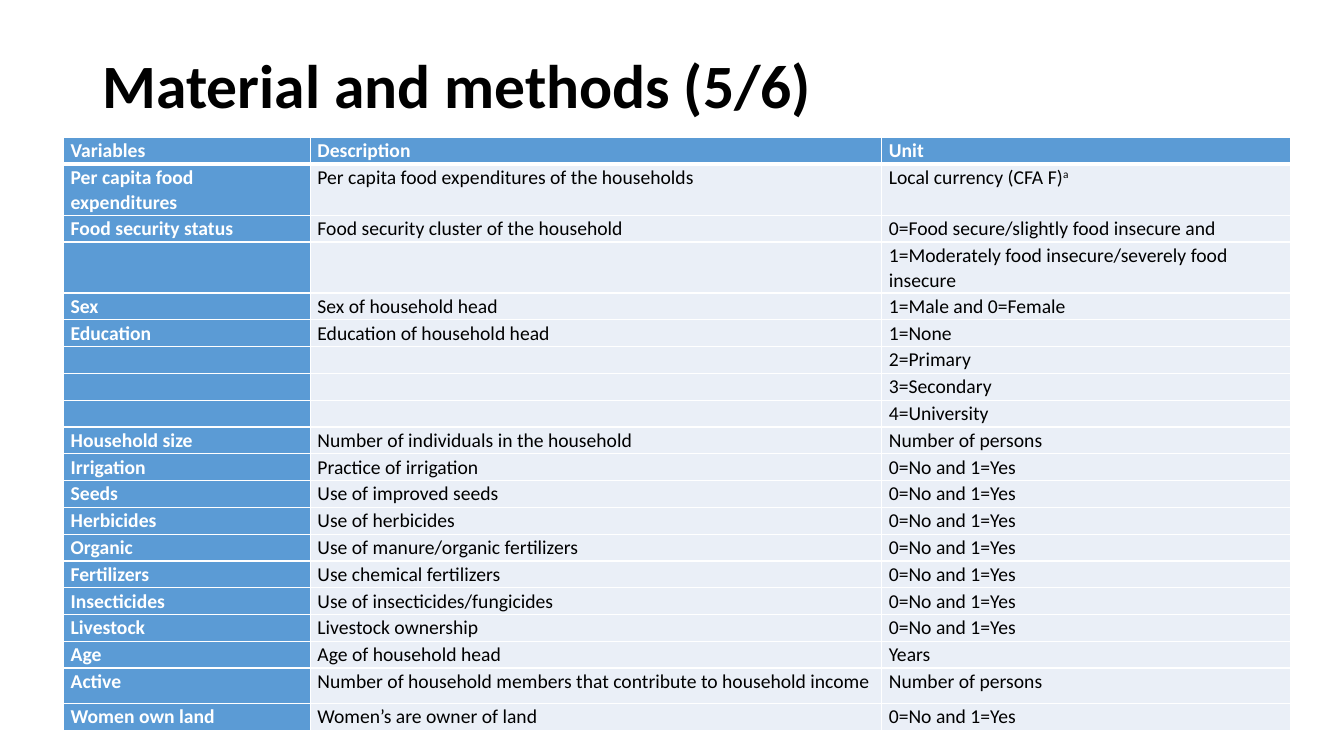
from dataclasses import dataclass

from lxml import etree
from pptx import Presentation, util as u
from pptx.dml.color import RGBColor
from pptx.enum import text
from pptx.oxml import ns


@dataclass(frozen=True)
class Theme:
    font: str = "Calibri"
    title_size: int = 44
    table_size: int = 14
    ink: str = "000000"
    white: str = "FFFFFF"
    heading_fill: str = "5B9BD5"
    body_fill: str = "EAEFF7"
    thin_border: int = 1
    thick_border: int = 3


THEME = Theme()
YES_NO = "0=No and 1=Yes"
COLUMN_WIDTHS = (6.22, 14.4, 10.31)
ROW_HEIGHT = 13.5 / 20


@dataclass(frozen=True)
class Variable:
    name: str
    description: str
    unit: str
    footnote: str = ""
    height: float = ROW_HEIGHT


ROWS = (
    Variable("Variables", "Description", "Unit"),
    Variable("Per capita food expenditures", "Per capita food expenditures of the households",
             "Local currency (CFA F)", footnote="a"),
    Variable("Food security status", "Food security cluster of the household",
             "0=Food secure/slightly food insecure and"),
    Variable("", "", "1=Moderately food insecure/severely food insecure"),
    Variable("Sex", "Sex of household head", "1=Male and 0=Female"),
    Variable("Education", "Education of household head", "1=None"),
    Variable("", "", "2=Primary"),
    Variable("", "", "3=Secondary"),
    Variable("", "", "4=University"),
    Variable("Household size", "Number of individuals in the household", "Number of persons"),
    Variable("Irrigation", "Practice of irrigation", YES_NO),
    Variable("Seeds", "Use of improved seeds", YES_NO),
    Variable("Herbicides", "Use of herbicides", YES_NO),
    Variable("Organic", "Use of manure/organic fertilizers", YES_NO),
    Variable("Fertilizers", "Use chemical fertilizers", YES_NO),
    Variable("Insecticides", "Use of insecticides/fungicides", YES_NO),
    Variable("Livestock", "Livestock ownership", YES_NO),
    Variable("Age", "Age of household head", "Years"),
    Variable("Active", "Number of household members that contribute to household income",
             "Number of persons", height=0.89),
    Variable("Women own land", "Women’s are owner of land", YES_NO),
)


def set_font(font, size: int, color: str, bold: bool) -> None:
    font.name = THEME.font
    font.size = u.Pt(size)
    font.bold = bold
    font.color.rgb = RGBColor.from_string(color)


def add_border(cell, side: str, width: int) -> None:
    properties = cell._tc.get_or_add_tcPr()
    line = etree.SubElement(properties, ns.qn(f"a:ln{side}"), w=str(u.Pt(width)))
    fill = etree.SubElement(line, ns.qn("a:solidFill"))
    etree.SubElement(fill, ns.qn("a:srgbClr"), val=THEME.white)


def fill_cell(cell, content: str, footnote: str, row: int, column: int) -> None:
    heading = row == 0 or column == 0
    for side in "LRTB":
        under_header = (row, side) in ((0, "B"), (1, "T"))
        add_border(cell, side, THEME.thick_border if under_header else THEME.thin_border)
    cell.fill.solid()
    cell.fill.fore_color.rgb = RGBColor.from_string(
        THEME.heading_fill if heading else THEME.body_fill)
    cell.margin_left = cell.margin_right = u.Cm(0.18)
    cell.margin_top = cell.margin_bottom = u.Cm(0)

    paragraph = cell.text_frame.paragraphs[0]
    paragraph.line_spacing = 1.07
    set_font(paragraph.font, THEME.table_size, THEME.white if heading else THEME.ink, heading)
    if content:
        paragraph.add_run().text = content
    else:
        etree.SubElement(paragraph._p, ns.qn("a:endParaRPr"), sz=str(THEME.table_size * 100))
    if footnote:
        run = paragraph.add_run()
        run.text = footnote
        run.font._element.set("baseline", "30000")


def format_title(slide) -> None:
    title = slide.shapes.title
    title.left, title.top = u.Cm(2.33), u.Cm(1.01)
    title.width, title.height = u.Cm(29.21), u.Cm(2.43)
    title.text_frame.text = "Material and methods (5/6)"
    title.text_frame.vertical_anchor = text.MSO_ANCHOR.MIDDLE
    paragraph = title.text_frame.paragraphs[0]
    paragraph.alignment = text.PP_ALIGN.LEFT
    paragraph.line_spacing = 0.9
    set_font(paragraph.font, THEME.title_size, THEME.ink, True)


def add_variables_table(slide) -> None:
    table = slide.shapes.add_table(
        len(ROWS), len(COLUMN_WIDTHS), u.Cm(1.6), u.Cm(3.46),
        u.Cm(sum(COLUMN_WIDTHS)), u.Cm(sum(variable.height for variable in ROWS))).table
    for column, width in zip(table.columns, COLUMN_WIDTHS):
        column.width = u.Cm(width)
    for row, variable in enumerate(ROWS):
        table.rows[row].height = u.Cm(variable.height)
        contents = ((variable.name, ""), (variable.description, ""),
                    (variable.unit, variable.footnote))
        for column, (content, footnote) in enumerate(contents):
            fill_cell(table.cell(row, column), content, footnote, row, column)


def main() -> None:
    presentation = Presentation()
    presentation.slide_width, presentation.slide_height = u.Cm(33.87), u.Cm(19.05)
    slide = presentation.slides.add_slide(presentation.slide_layouts.get_by_name("Title Only"))
    format_title(slide)
    add_variables_table(slide)
    presentation.save("out.pptx")


if __name__ == "__main__":
    main()
